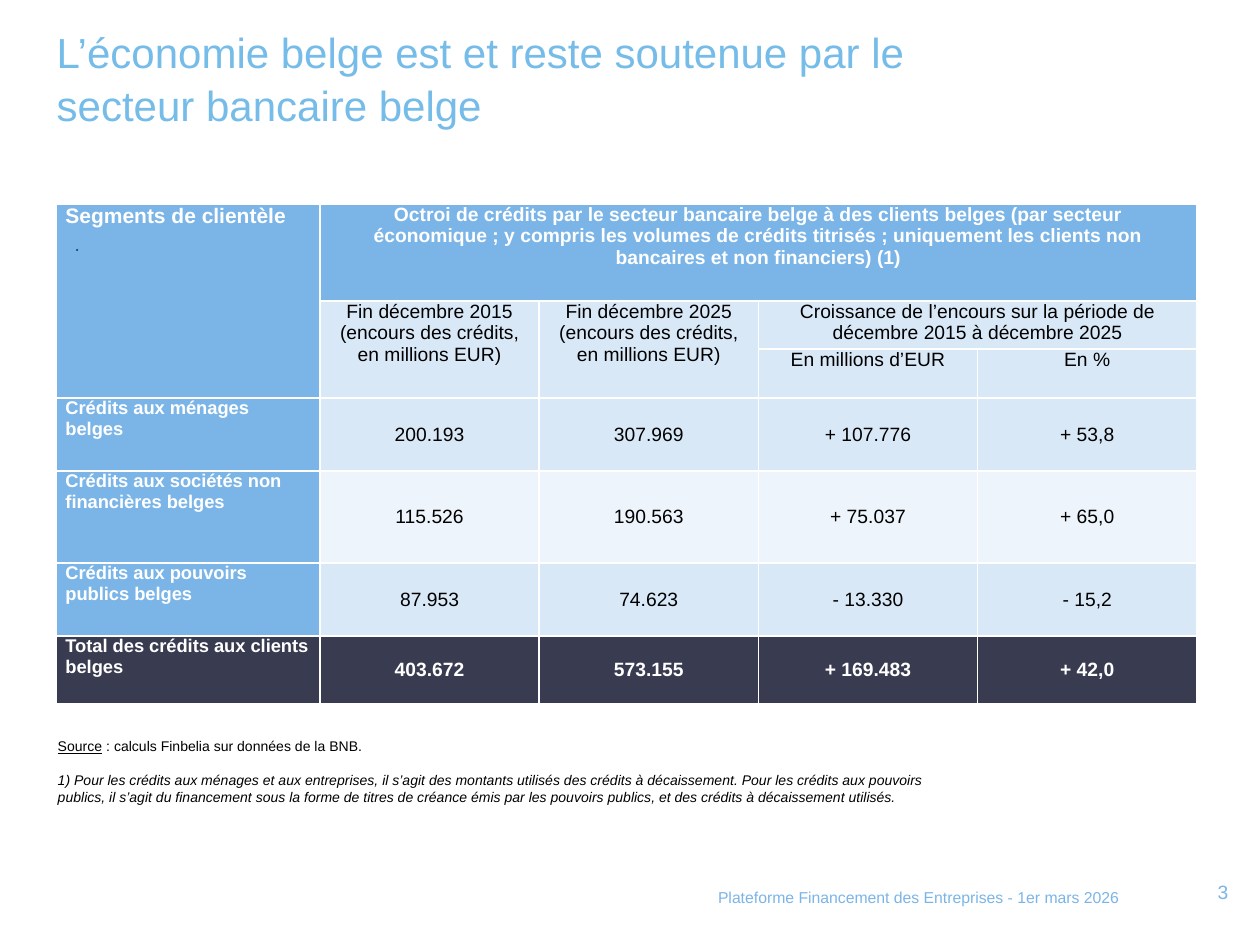
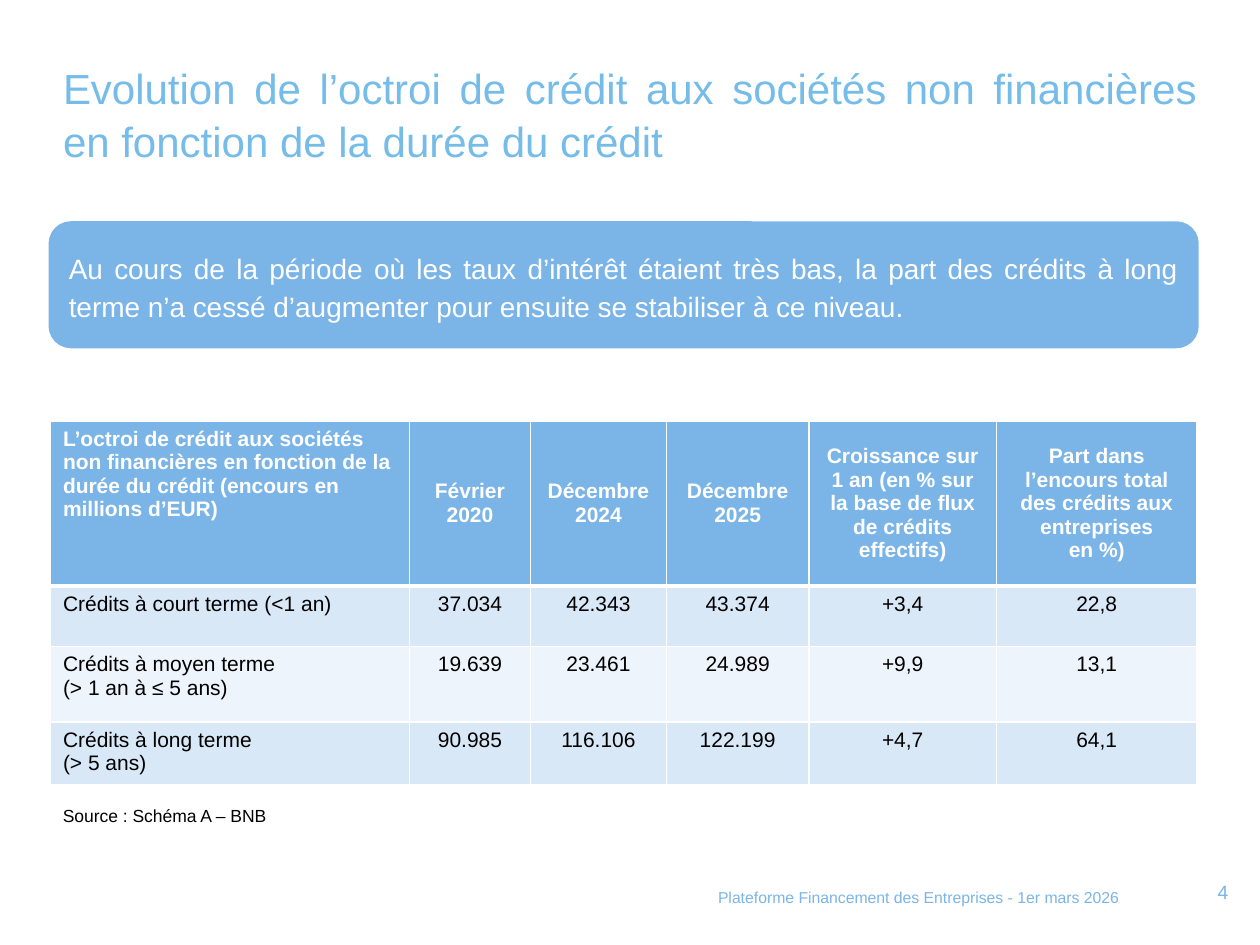
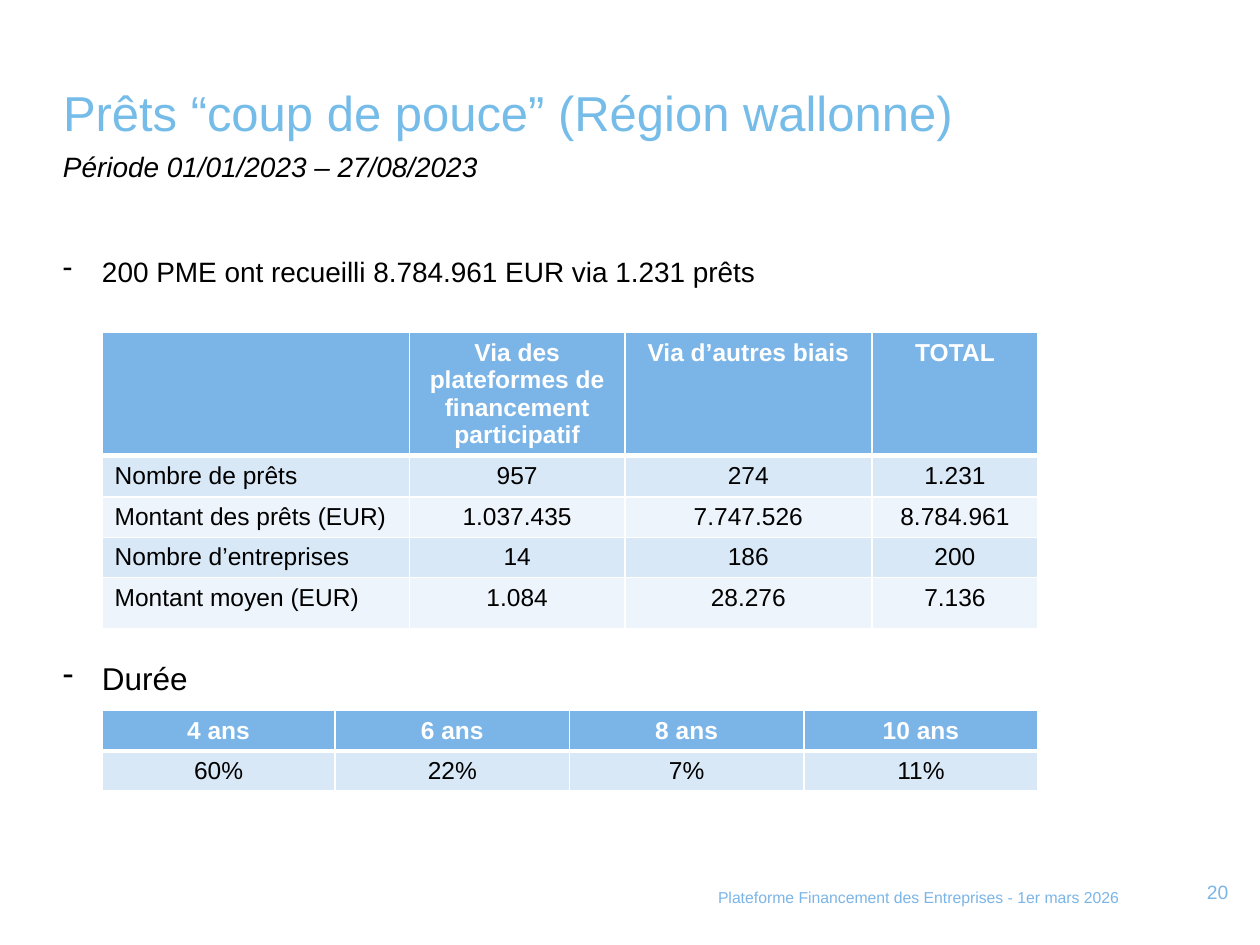
from lxml import etree
from pptx import Presentation
from pptx.dml.color import RGBColor
from pptx.enum.shapes import MSO_SHAPE
from pptx.enum.text import MSO_ANCHOR, MSO_AUTO_SIZE, PP_ALIGN
from pptx.oxml.ns import qn
from pptx.util import Inches, Pt

LEFT, CENTER, RIGHT, JUSTIFY = PP_ALIGN.LEFT, PP_ALIGN.CENTER, PP_ALIGN.RIGHT, PP_ALIGN.JUSTIFY
TOP, MIDDLE = MSO_ANCHOR.TOP, MSO_ANCHOR.MIDDLE
NO_AUTOFIT = MSO_AUTO_SIZE.NONE
ROUNDED = MSO_SHAPE.ROUNDED_RECTANGLE

FONT = "Arial"
TITLE_BLUE = RGBColor(0x76, 0xBC, 0xE9)
BLUE = RGBColor(0x7B, 0xB5, 0xE7)
PALE = RGBColor(0xD9, 0xE8, 0xF7)
PALER = RGBColor(0xED, 0xF4, 0xFB)
NAVY = RGBColor(0x39, 0x3C, 0x50)
DOT_BLUE = RGBColor(0x1F, 0x49, 0x7D)
WHITE = RGBColor(0xFF, 0xFF, 0xFF)
BLACK = RGBColor(0, 0, 0)

FOOTER = "Plateforme Financement des Entreprises - 1er mars 2026"

SEGMENT_ROWS = [
    ["Segments de clientèle", "Octroi de crédits par le secteur bancaire belge à des clients belges "
     "(par secteur économique ; y compris les volumes de crédits titrisés ; uniquement les clients "
     "non bancaires et non financiers) (1)", "", "", ""],
    ["", "Fin décembre 2015 (encours des crédits, en millions EUR)",
     "Fin décembre 2025 (encours des crédits, en millions EUR)",
     "Croissance de l’encours sur la période de décembre 2015 à décembre 2025", ""],
    ["", "", "", "En millions d’EUR", "En %"],
    ["Crédits aux ménages belges", "200.193", "307.969", "+ 107.776", "+ 53,8"],
    ["Crédits aux sociétés non financières belges", "115.526", "190.563", "+ 75.037", "+ 65,0"],
    ["Crédits aux pouvoirs publics belges", "87.953", "74.623", "- 13.330", "- 15,2"],
    ["Total des crédits aux clients belges", "403.672", "573.155", "+ 169.483", "+ 42,0"],
]
SEGMENT_MERGES = [((0, 0), (2, 0)), ((0, 1), (0, 4)), ((1, 1), (2, 1)),
                  ((1, 2), (2, 2)), ((1, 3), (1, 4))]
SEGMENT_FILLS = [BLUE, PALE, PALE, PALE, PALER, PALE, NAVY]
SEGMENT_NOTE = (
    "1) Pour les crédits aux ménages et aux entreprises, il s’agit des montants utilisés des "
    "crédits à décaissement. Pour les crédits aux pouvoirs publics, il s’agit du financement sous "
    "la forme de titres de créance émis par les pouvoirs publics, et des crédits à décaissement "
    "utilisés.")

TERM_MESSAGE = (
    "Au cours de la période où les taux d’intérêt étaient très bas, la part des crédits à long "
    "terme n’a cessé d’augmenter pour ensuite se stabiliser à ce niveau.")
TERM_ROWS = [
    ["L’octroi de crédit aux sociétés non financières en fonction de la durée du crédit "
     "(encours en millions d’EUR)", "Février 2020", "Décembre 2024", "Décembre 2025",
     "Croissance sur 1 an (en % sur la base de flux de crédits effectifs)",
     "Part dans l’encours total des crédits aux entreprises\nen %)"],
    ["Crédits à court terme (<1 an)", "37.034", "42.343", "43.374", "+3,4", "22,8"],
    ["Crédits à moyen terme\n(> 1 an à ≤ 5 ans)", "19.639", "23.461", "24.989", "+9,9", "13,1"],
    ["Crédits à long terme\n(> 5 ans)", "90.985", "116.106", "122.199", "+4,7", "64,1"],
]

LOAN_ROWS = [
    ["", "Via des plateformes de financement participatif", "Via d’autres biais", "TOTAL"],
    ["Nombre de prêts", "957", "274", "1.231"],
    ["Montant des prêts (EUR)", "1.037.435", "7.747.526", "8.784.961"],
    ["Nombre d’entreprises", "14", "186", "200"],
    ["Montant moyen (EUR)", "1.084", "28.276", "7.136"],
]
DURATION_ROWS = [["4 ans", "6 ans", "8 ans", "10 ans"], ["60%", "22%", "7%", "11%"]]


def write(frame, text, size=12, color=BLACK, bold=False, italic=False, underline=False,
          align=LEFT, spacing=1.0, before=0, bullet=None, joined=False):
    for line in text.split("\n"):
        para = frame.paragraphs[-1]
        if para.runs and not joined:
            para = frame.add_paragraph()
        if bullet:
            properties = para._p.get_or_add_pPr()
            properties.set("marL", str(Inches(0.31)))
            properties.set("indent", str(-Inches(0.31)))
            etree.SubElement(properties, qn("a:buChar")).set("char", bullet)
        para.alignment, para.line_spacing = align, spacing
        if before:
            para.space_before = Pt(before)
        span = para.add_run()
        span.text = line
        font = span.font
        font.name, font.size, font.color.rgb = FONT, Pt(size), color
        font.bold, font.italic, font.underline = bold, italic, underline


def set_frame(frame, anchor=TOP, margins=None, wrap=True):
    frame.word_wrap, frame.auto_size, frame.vertical_anchor = wrap, NO_AUTOFIT, anchor
    if margins is not None:
        frame.margin_left = frame.margin_right = Inches(margins)
        frame.margin_top = frame.margin_bottom = Inches(margins)


def add_text(slide, place, anchor=TOP, margins=None, wrap=True):
    frame = slide.shapes.add_textbox(*map(Inches, place)).text_frame
    set_frame(frame, anchor, margins, wrap)
    return frame


def add_page(deck, number, title, place, size=24, align=LEFT):
    slide = deck.slides.add_slide(deck.slide_layouts[5])
    box = slide.shapes.title
    box.left, box.top, box.width, box.height = map(Inches, place)
    set_frame(box.text_frame, margins=0)
    write(box.text_frame, title, size=size, color=TITLE_BLUE, align=align, spacing=1.05)
    write(add_text(slide, (9.45, 6.99, 0.3, 0.18), MIDDLE, 0), number,
          size=11, color=BLUE, align=RIGHT)
    write(add_text(slide, (5.6, 7, 3.85, 0.18)), FOOTER, size=9, color=BLUE)
    return slide


def set_borders(cell, bottom):
    properties = cell._tc.get_or_add_tcPr()
    for position, side in enumerate("LRTB"):
        line = etree.Element(qn(f"a:ln{side}"), w=str(Pt(bottom if side == "B" else 1)))
        fill = etree.SubElement(line, qn("a:solidFill"))
        etree.SubElement(fill, qn("a:srgbClr")).set("val", str(WHITE))
        properties.insert(position, line)


def add_grid(slide, left, top, widths, heights, rows, style, merges=(), margins=None,
             header_line=3):
    table = slide.shapes.add_table(len(rows), len(widths), Inches(left), Inches(top),
                                   Inches(sum(widths)), Inches(sum(heights))).table
    for column, width in zip(table.columns, widths):
        column.width = Inches(width)
    for row, height in zip(table.rows, heights):
        row.height = Inches(height)
    for first, last in merges:
        table.cell(*first).merge(table.cell(*last))
    for r, texts in enumerate(rows):
        for c, text in enumerate(texts):
            cell = table.cell(r, c)
            fill, anchor, text_format = style(r, c)
            cell.fill.solid()
            cell.fill.fore_color.rgb = fill
            cell.vertical_anchor = anchor
            if margins:
                cell.margin_left = cell.margin_right = Inches(margins[0])
                cell.margin_top = cell.margin_bottom = Inches(margins[1])
            set_borders(cell, header_line if r == 0 else 1)
            if text:
                write(cell.text_frame, text, **text_format)


def segment_style(r, c):
    fill = BLUE if c == 0 and r < 6 else SEGMENT_FILLS[r]
    strong = fill in (BLUE, NAVY)
    size = 11 if c else 12 if r == 0 else 10.5
    return fill, MIDDLE if r > 2 and c else TOP, dict(
        size=size, color=WHITE if strong else BLACK, bold=strong, align=CENTER if c else LEFT)


def banded_style(size, header_anchor=TOP, label_column=True):
    def style(r, c):
        label = label_column and c == 0
        header = r == 0
        fill = BLUE if header else PALE if r % 2 else PALER
        return fill, header_anchor if header and not label else TOP, dict(
            size=size, color=WHITE if header else BLACK, bold=header,
            align=LEFT if label else CENTER)
    return style


def build_segments(deck):
    slide = add_page(deck, "3", "L’économie belge est et reste soutenue par le\n"
                     "secteur bancaire belge", (0.45, 0.19, 9, 0.81))
    add_grid(slide, 0.45, 1.62, [2.09] + [1.74] * 4, [0.77, 0.38, 0.39, 0.58, 0.73, 0.58, 0.54],
             SEGMENT_ROWS, segment_style, SEGMENT_MERGES, (0.07, 0), 1)
    write(add_text(slide, (0.5, 1.79, 0.29, 0.29), MIDDLE, wrap=False), ".",
          size=11, color=DOT_BLUE, italic=True)
    notes = add_text(slide, (0.36, 5.8, 7.48, 0.91))
    write(notes, "Source", size=8, underline=True, spacing=1.05)
    write(notes, " : calculs Finbelia sur données de la BNB.", size=8, spacing=1.05, joined=True)
    write(notes, SEGMENT_NOTE, size=8, italic=True, spacing=1.05, before=9)


def build_terms(deck):
    slide = add_page(deck, "4", "Evolution de l’octroi de crédit aux sociétés non financières "
                     "en fonction de la durée du crédit", (0.5, 0.48, 9, 0.81), align=JUSTIFY)
    banner = slide.shapes.add_shape(ROUNDED, *map(Inches, (0.4, 1.77, 9.1, 0.98)))
    banner.shadow.inherit = False
    banner.fill.solid()
    banner.fill.fore_color.rgb = banner.line.color.rgb = BLUE
    banner.line.width = Pt(2)
    set_frame(banner.text_frame, MIDDLE)
    write(banner.text_frame, TERM_MESSAGE, size=16, color=WHITE, align=JUSTIFY, spacing=1.15)
    add_grid(slide, 0.4, 3.34, [2.85, 0.96, 1.08, 1.13, 1.49, 1.59], [1.31, 0.48, 0.6, 0.5],
             TERM_ROWS, banded_style(12, MIDDLE))
    write(add_text(slide, (0.4, 6.34, 8.53, 0.27)), "Source : Schéma A – BNB", size=10)


def build_loans(deck):
    slide = add_page(deck, "20", "Prêts “coup de pouce” (Région wallonne)",
                     (0.5, 0.63, 9, 0.47), size=28)
    body = add_text(slide, (0.5, 1.16, 9, 5.27), margins=0)
    write(body, "Période 01/01/2023 – 27/08/2023", size=16, italic=True, spacing=1.1)
    write(body, "200 PME ont recueilli 8.784.961 EUR via 1.231 prêts", size=16,
          spacing=1.1, before=39, bullet="-")
    write(body, "Durée", size=18, spacing=1.1, before=210, bullet="-")
    add_grid(slide, 0.81, 5.64, [1.85] + [1.86] * 3, [0.32, 0.32], DURATION_ROWS,
             banded_style(14, label_column=False))
    add_grid(slide, 0.81, 2.64, [2.44, 1.71, 1.96, 1.32], [0.97, 0.33, 0.32, 0.32, 0.41],
             LOAN_ROWS, banded_style(14))


def main():
    deck = Presentation()
    deck.slide_width, deck.slide_height = Inches(10), Inches(7.5)
    build_segments(deck)
    build_terms(deck)
    build_loans(deck)
    deck.save("out.pptx")


if __name__ == "__main__":
    main()
